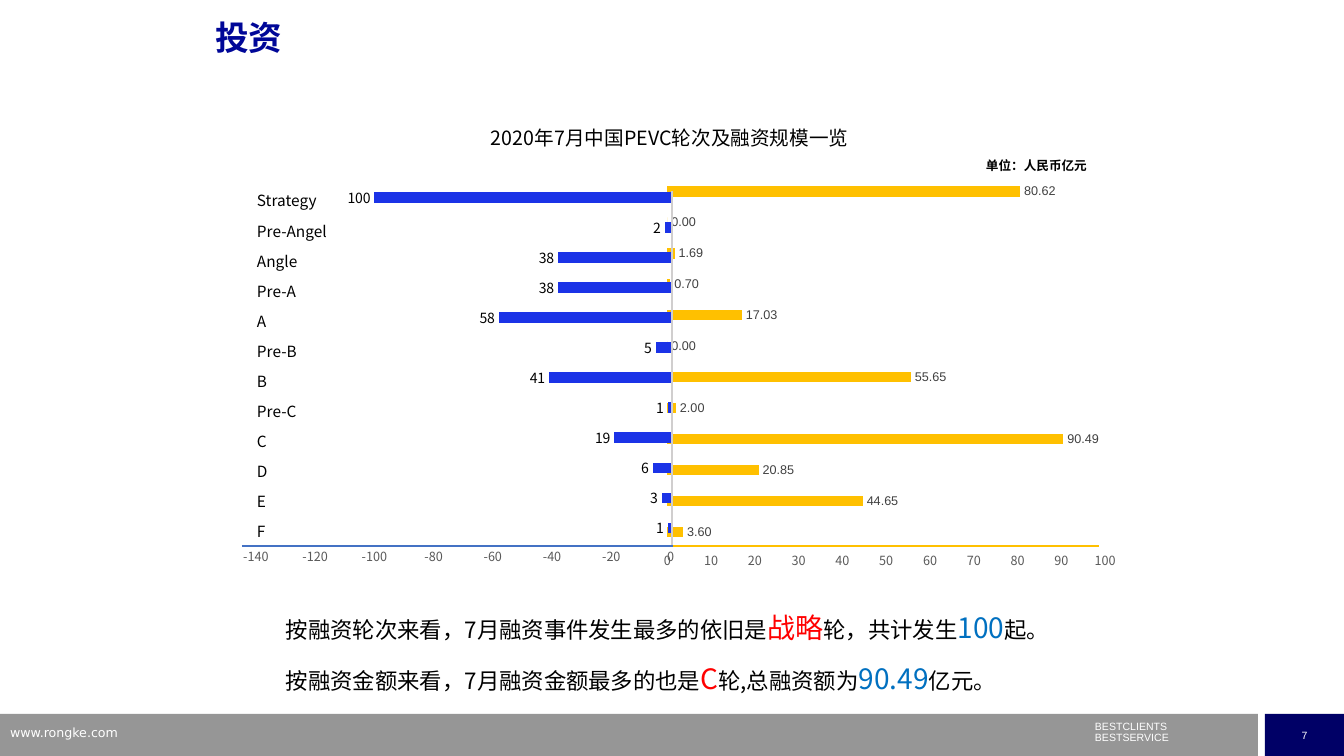
from dataclasses import dataclass

from lxml import etree
from pptx import Presentation
from pptx import util as u
from pptx.chart.data import CategoryChartData
from pptx.dml.color import RGBColor
from pptx.enum import chart as charts, shapes, text
from pptx.oxml import parse_xml
from pptx.oxml.ns import nsdecls, qn

PX_PER_INCH = 100.8


@dataclass(frozen=True)
class Theme:
    cjk: str = "Noto Sans CJK SC"
    latin: str = "Arial"
    web: str = "DejaVu Sans"
    black: str = "000000"
    white: str = "FFFFFF"
    title: str = "000798"
    red: str = "FF0000"
    blue: str = "0070C0"
    count_bar: str = "1B33E7"
    amount: str = "FFC000"
    count_axis: str = "4472C4"
    divider: str = "D0CECE"
    axis_text: str = "595959"
    label_text: str = "404040"
    footer: str = "969696"
    page: str = "000066"
    title_size: float = 24
    heading_size: float = 14
    body_size: float = 16
    accent_size: float = 20
    round_size: float = 11
    label_size: float = 10
    small_size: float = 9
    footer_size: float = 7.5


THEME = Theme()

# Financing round, number of deals, amount raised
ROUNDS = [
    ("Strategy", 100, 80.62), ("Pre-Angel", 2, 0), ("Angle", 38, 1.69),
    ("Pre-A", 38, 0.7), ("A", 58, 17.03), ("Pre-B", 5, 0),
    ("B", 41, 55.65), ("Pre-C", 1, 2), ("C", 19, 90.49),
    ("D", 6, 20.85), ("E", 3, 44.65), ("F", 1, 3.6),
]


def px(length):
    return u.Inches(length / PX_PER_INCH)


def box(*lengths):
    return [px(length) for length in lengths]


def color(value):
    return RGBColor.from_string(value)


def style_font(font, size, value, name, bold=False):
    font.size = u.Pt(size)
    font.color.rgb = color(value)
    font.name = name
    font.bold = bold


def add_run(paragraph, words, size, value, name=THEME.cjk, bold=False):
    run = paragraph.add_run()
    run.text = words
    style_font(run.font, size, value, name, bold)
    latin = run.font._element.find(qn("a:latin"))
    latin.addnext(parse_xml(f'<a:ea {nsdecls("a")} typeface="{THEME.cjk}"/>'))


def add_lines(frame, lines, spacing=None, align=None, gap=0):
    """Each line is a list of runs: words, size, colour, font, bold."""
    for index, runs in enumerate(lines):
        paragraph = frame.paragraphs[0] if index == 0 else frame.add_paragraph()
        paragraph.line_spacing = spacing
        paragraph.alignment = align
        if index and gap:
            paragraph.space_before = u.Pt(gap)
        for run in runs:
            add_run(paragraph, *run)


def add_text(slide, place, lines, margins=(0, 0, 0, 0), **layout):
    frame = slide.shapes.add_textbox(*box(*place)).text_frame
    frame.word_wrap = True
    (frame.margin_left, frame.margin_top,
     frame.margin_right, frame.margin_bottom) = box(*margins)
    add_lines(frame, lines, **layout)


def add_block(slide, place, fill):
    shape = slide.shapes.add_shape(shapes.MSO_SHAPE.RECTANGLE, *box(*place))
    shape.shadow.inherit = False
    shape.fill.solid()
    shape.fill.fore_color.rgb = color(fill)
    shape.line.fill.background()
    return shape


def add_line(slide, start, end, value, width):
    line = slide.shapes.add_connector(
        shapes.MSO_CONNECTOR.STRAIGHT, *box(*start, *end))
    line.line.color.rgb = color(value)
    line.line.width = u.Pt(width)
    etree.SubElement(line._element.spPr, qn("a:effectLst"))


def clear_background(chart, plot_layout):
    """Make the chart see-through and fix its inner plot area."""
    no_fill = (f'<c:spPr {nsdecls("c", "a")}><a:noFill/>'
               '<a:ln><a:noFill/></a:ln></c:spPr>')
    chart_node = chart._chartSpace.find(qn("c:chart"))
    chart_node.addnext(parse_xml(no_fill))
    plot_area = chart_node.find(qn("c:plotArea"))
    plot_area.append(parse_xml(no_fill))
    for old in plot_area.findall(qn("c:layout")):
        plot_area.remove(old)
    edges = "".join(f'<c:{name} val="{value}"/>'
                    for name, value in zip("xywh", plot_layout))
    plot_area.insert(0, parse_xml(
        f'<c:layout {nsdecls("c")}><c:manualLayout>'
        '<c:layoutTarget val="inner"/><c:xMode val="edge"/>'
        f'<c:yMode val="edge"/>{edges}</c:manualLayout></c:layout>'))


def add_bars(slide, place, name, values, fill, gap, limits, step,
             plot_layout, number_format, label_font):
    data = CategoryChartData()
    data.categories = [str(number + 1) for number in range(len(values))]
    data.add_series(name, values)
    chart = slide.shapes.add_chart(
        charts.XL_CHART_TYPE.BAR_CLUSTERED, *box(*place), data).chart
    style_font(chart.font, THEME.label_size, THEME.black, THEME.cjk)
    chart.has_legend = False
    chart.has_title = False

    # Axes
    chart.category_axis.visible = False
    axis = chart.value_axis
    axis.minimum_scale, axis.maximum_scale = limits
    axis.major_unit = step
    axis.has_major_gridlines = False
    axis.major_tick_mark = charts.XL_TICK_MARK.NONE
    axis.format.line.fill.background()
    axis.tick_labels.number_format = "0"
    axis.tick_labels.number_format_is_linked = False
    style_font(axis.tick_labels.font, THEME.small_size, THEME.axis_text,
               THEME.cjk)

    # Bars and value labels
    plot = chart.plots[0]
    plot.vary_by_categories = False
    plot.gap_width = gap
    bars = plot.series[0]
    bars.invert_if_negative = False
    bars.format.fill.solid()
    bars.format.fill.fore_color.rgb = color(fill)
    labels = bars.data_labels
    labels.show_value = True
    labels.position = charts.XL_LABEL_POSITION.OUTSIDE_END
    labels.number_format = number_format
    labels.number_format_is_linked = False
    style_font(labels.font, *label_font)
    clear_background(chart, plot_layout)


def add_footer(slide):
    t = THEME
    add_block(slide, (0, 714, 1258, 42), t.footer)
    page = add_block(slide, (1265, 714, 79, 42), t.page).text_frame
    page.vertical_anchor = text.MSO_ANCHOR.MIDDLE
    add_lines(page, [[("7", t.footer_size, t.white, t.latin)]],
              align=text.PP_ALIGN.CENTER)
    add_text(slide, (1085, 720, 202, 30),
             [[(words, t.footer_size, t.white, t.latin)]
              for words in ("BESTCLIENTS", "BESTSERVICE")],
             (10, 5, 10, 5), spacing=0.5, gap=4)
    add_text(slide, (0, 720, 323, 26),
             [[("www.rongke.com", t.small_size, t.white, t.web)]],
             (10, 5, 10, 5))


def main():
    t = THEME
    presentation = Presentation()
    presentation.slide_width, presentation.slide_height = box(1344, 756)
    slide = presentation.slides.add_slide(presentation.slide_layouts[5])
    add_footer(slide)

    # Title
    title = slide.shapes.title
    title.left, title.top, title.width, title.height = box(205, 16, 907, 71)
    title.text_frame.vertical_anchor = text.MSO_ANCHOR.TOP
    add_lines(title.text_frame,
              [[("投资", t.title_size, t.title, t.latin, True)]],
              spacing=0.9, align=text.PP_ALIGN.LEFT)

    # Findings
    plain = (t.body_size, t.black)
    red, blue = (t.accent_size, t.red), (t.accent_size, t.blue)
    add_text(slide, (286, 594, 774, 96), [
        [("按融资轮次来看，7月融资事件发生最多的依旧是", *plain),
         ("战略", *red), ("轮，共计发生", *plain),
         ("100", *blue), ("起。", *plain)],
        [("按融资金额来看，7月融资金额最多的也是", *plain),
         ("C", *red), ("轮,总融资额为", *plain),
         ("90.49", *blue), ("亿元。", *plain)],
    ], spacing=1.5, align=text.PP_ALIGN.JUSTIFY)

    # Mirrored bars: amounts to the right, deal counts to the left
    names, counts, amounts = zip(*ROUNDS)
    add_bars(slide, (653, 168, 476, 408), "融资金额", amounts[::-1],
             t.amount, 202, (0, 100), 10, (0.03, 0.02, 0.92, 0.91), "0.00",
             (t.small_size, t.label_text, t.latin))
    add_bars(slide, (228, 166, 466, 410), "融资事件",
             [-count for count in counts[::-1]],
             t.count_bar, 182, (-140, 0), 20, (0.06, 0.04, 0.89, 0.88), "0;0",
             (t.label_size, t.black, t.cjk))

    # Chart heading, axis lines, unit and round names
    add_text(slide, (491, 126, 364, 24),
             [[("2020年7月中国PEVC轮次及融资规模一览",
                t.heading_size, t.black)]])
    add_line(slide, (672, 191), (672, 547), t.divider, 1)
    add_line(slide, (242, 546), (673, 546), t.count_axis, 1.5)
    add_line(slide, (673, 546), (1099, 546), t.amount, 1.5)
    add_text(slide, (986, 158, 105, 15),
             [[("单位：人民币亿元", t.small_size, t.black, t.cjk, True)]])
    add_text(slide, (247, 180, 120, 345),
             [[(name, t.round_size, t.black)] for name in names],
             (10, 0, 10, 5), spacing=u.Pt(21.5))
    presentation.save("out.pptx")


if __name__ == "__main__":
    main()
